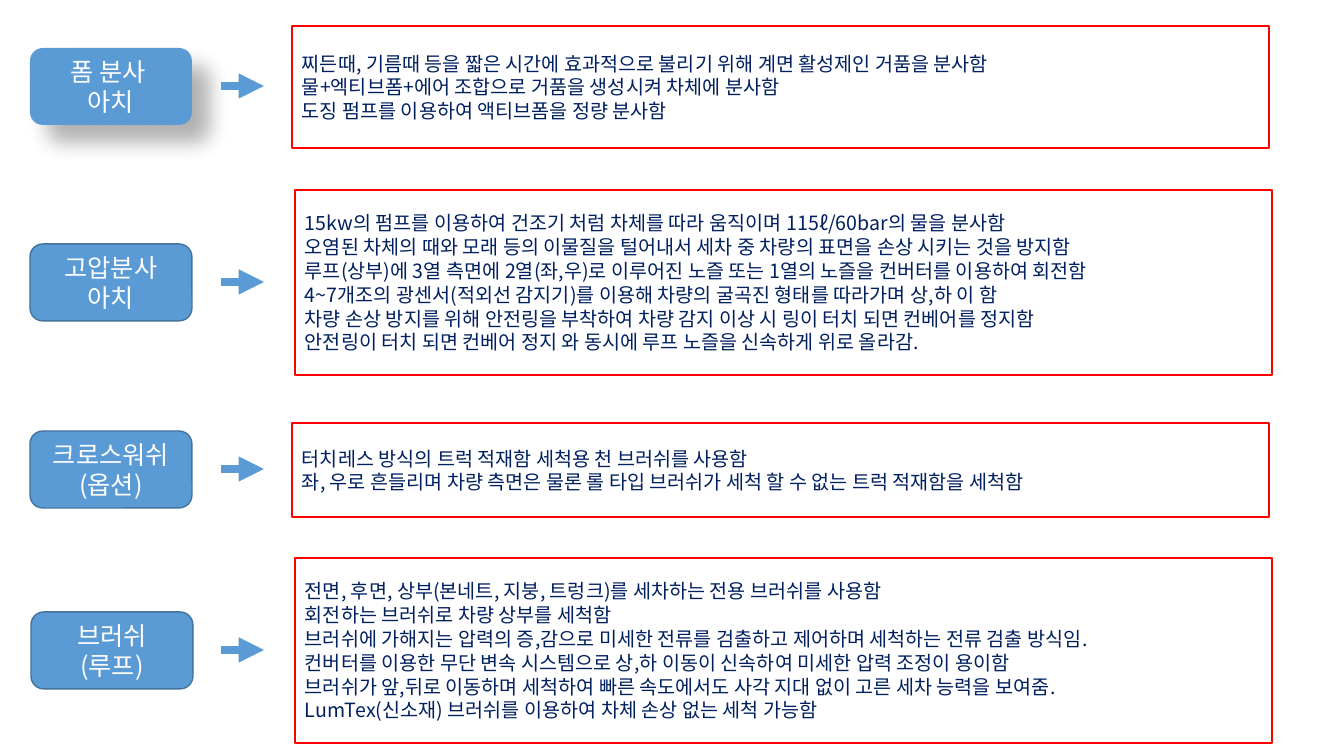
"""Builds a slide of four car wash stages, each with an arrow to its description."""
import pptx
import pptx.util
import pptx.dml.color
import pptx.enum.shapes
import pptx.enum.text
import pptx.oxml
import pptx.oxml.ns

MSO_SHAPE = pptx.enum.shapes.MSO_SHAPE
ALIGN = pptx.enum.text.PP_ALIGN
RGB = pptx.dml.color.RGBColor.from_string
NS = pptx.oxml.ns.nsdecls("a")

theme = {
    "font": "Noto Sans CJK KR",
    "stage": "5B9BD5", "stage edge": "43739E", "frame": "FF0000",
    "stage text": {"size": 18, "color": "FFFFFF", "pitch": 21.5, "align": ALIGN.CENTER},
    "detail text": {"size": 14, "color": "002060", "pitch": 17, "align": ALIGN.LEFT},
}


def px(length):
    return pptx.util.Emu(round(length * 914400 / 100.8))


def add_panel(preset, box, lines, style, fill, edge):
    panel = slide.shapes.add_shape(preset, *map(px, box))
    panel.shadow.inherit = False
    if fill:
        panel.fill.solid()
        panel.fill.fore_color.rgb = RGB(fill)
    else:
        panel.fill.background()
    if edge:
        panel.line.color.rgb = RGB(edge)
        panel.line.width = pptx.util.Pt(1)
    else:
        panel.line.fill.background()
    frame = panel.text_frame
    frame.word_wrap = True
    frame.vertical_anchor = pptx.enum.text.MSO_ANCHOR.MIDDLE
    for index, line in enumerate(lines):
        paragraph = frame.add_paragraph() if index else frame.paragraphs[0]
        paragraph.alignment = style["align"]
        paragraph.line_spacing = pptx.util.Pt(style["pitch"])
        run = paragraph.add_run()
        run.text = line
        formats = {"name": theme["font"], "size": pptx.util.Pt(style["size"])}
        for key, value in formats.items():
            setattr(run.font, key, value)
        run.font.color.rgb = RGB(style["color"])
        run.font._element.append(
            pptx.oxml.parse_xml(f'<a:ea {NS} typeface="{theme["font"]}"/>'))
    return panel


stages = [
    {"label": ["폼 분사 ", "아치"], "stage": (30, 48), "detail": (292, 26, 122), "edge": None,
     "lines": [
         "찌든때, 기름때 등을 짧은 시간에 효과적으로 불리기 위해 계면 활성제인 거품을 분사함",
         "물+엑티브폼+에어 조합으로 거품을 생성시켜 차체에 분사함",
         "도징 펌프를 이용하여 액티브폼을 정량 분사함"]},
    {"label": ["고압분사", "아치"], "stage": (30, 244), "detail": (295, 190, 185),
     "edge": theme["stage edge"],
     "lines": [
         "15kw의 펌프를 이용하여 건조기 처럼 차체를 따라 움직이며 115ℓ/60bar의 물을 분사함",
         "오염된 차체의 때와 모래 등의 이물질을 털어내서 세차 중 차량의 표면을 손상 시키는 것을 방지함",
         "루프(상부)에 3열 측면에 2열(좌,우)로 이루어진 노즐 또는 1열의 노즐을 컨버터를 이용하여 회전함",
         "4~7개조의 광센서(적외선 감지기)를 이용해 차량의 굴곡진 형태를 따라가며 상,하 이 함",
         "차량 손상 방지를 위해 안전링을 부착하여 차량 감지 이상 시 링이 터치 되면 컨베어를 정지함",
         "안전링이 터치 되면 컨베어 정지 와 동시에 루프 노즐을 신속하게 위로 올라감."]},
    {"label": ["크로스워쉬", "(옵션)"], "stage": (30, 431), "detail": (292, 423, 94),
     "edge": theme["stage edge"],
     "lines": [
         "터치레스 방식의 트럭 적재함 세척용 천 브러쉬를 사용함",
         "좌, 우로 흔들리며 차량 측면은 물론 롤 타입 브러쉬가 세척 할 수 없는 트럭 적재함을 세척함"]},
    {"label": ["브러쉬", "(루프)"], "stage": (31, 612), "detail": (295, 558, 185),
     "edge": theme["stage edge"],
     "lines": [
         "전면, 후면, 상부(본네트, 지붕, 트렁크)를 세차하는 전용 브러쉬를 사용함",
         "회전하는 브러쉬로 차량 상부를 세척함",
         "브러쉬에 가해지는 압력의 증,감으로 미세한 전류를 검출하고 제어하며 세척하는 전류 검출 방식임.",
         "컨버터를 이용한 무단 변속 시스템으로 상,하 이동이 신속하여 미세한 압력 조정이 용이함",
         "브러쉬가 앞,뒤로 이동하며 세척하여 빠른 속도에서도 사각 지대 없이 고른 세차 능력을 보여줌.",
         "LumTex(신소재) 브러쉬를 이용하여 차체 손상 없는 세척 가능함"]},
]
stage_width, stage_height, detail_width = 162, 77, 977
arrow_start, arrow_end = 221, 264

deck = pptx.Presentation()
deck.slide_width, deck.slide_height = px(1344), px(756)
slide = deck.slides.add_slide(deck.slide_layouts[6])

stage_panels = []
for stage in stages:
    left, top = stage["stage"]
    stage_panels.append(add_panel(
        MSO_SHAPE.ROUNDED_RECTANGLE, (left, top, stage_width, stage_height),
        stage["label"], theme["stage text"], theme["stage"], stage["edge"]))

    middle = top + stage_height // 2
    arrow = slide.shapes.add_connector(
        pptx.enum.shapes.MSO_CONNECTOR.STRAIGHT,
        px(arrow_start), px(middle), px(arrow_end), px(middle))
    arrow.line.color.rgb = RGB(theme["stage"])
    arrow.line.width = pptx.util.Pt(6)
    arrow.line._get_or_add_ln().append(
        pptx.oxml.parse_xml(f'<a:tailEnd {NS} type="triangle"/>'))
    arrow._element.spPr.append(pptx.oxml.parse_xml(f"<a:effectLst {NS}/>"))

    detail_left, detail_top, detail_height = stage["detail"]
    add_panel(
        MSO_SHAPE.RECTANGLE, (detail_left, detail_top, detail_width, detail_height),
        stage["lines"], theme["detail text"], None, theme["frame"])

effects = stage_panels[0]._element.spPr.find(pptx.oxml.ns.qn("a:effectLst"))
effects.append(pptx.oxml.parse_xml(
    f'<a:outerShdw {NS} blurRad="{pptx.util.Pt(15)}" dist="{pptx.util.Pt(18)}" '
    'dir="2700000" algn="tl" rotWithShape="0">'
    '<a:srgbClr val="000000"><a:alpha val="30000"/></a:srgbClr></a:outerShdw>'))

deck.save("out.pptx")
